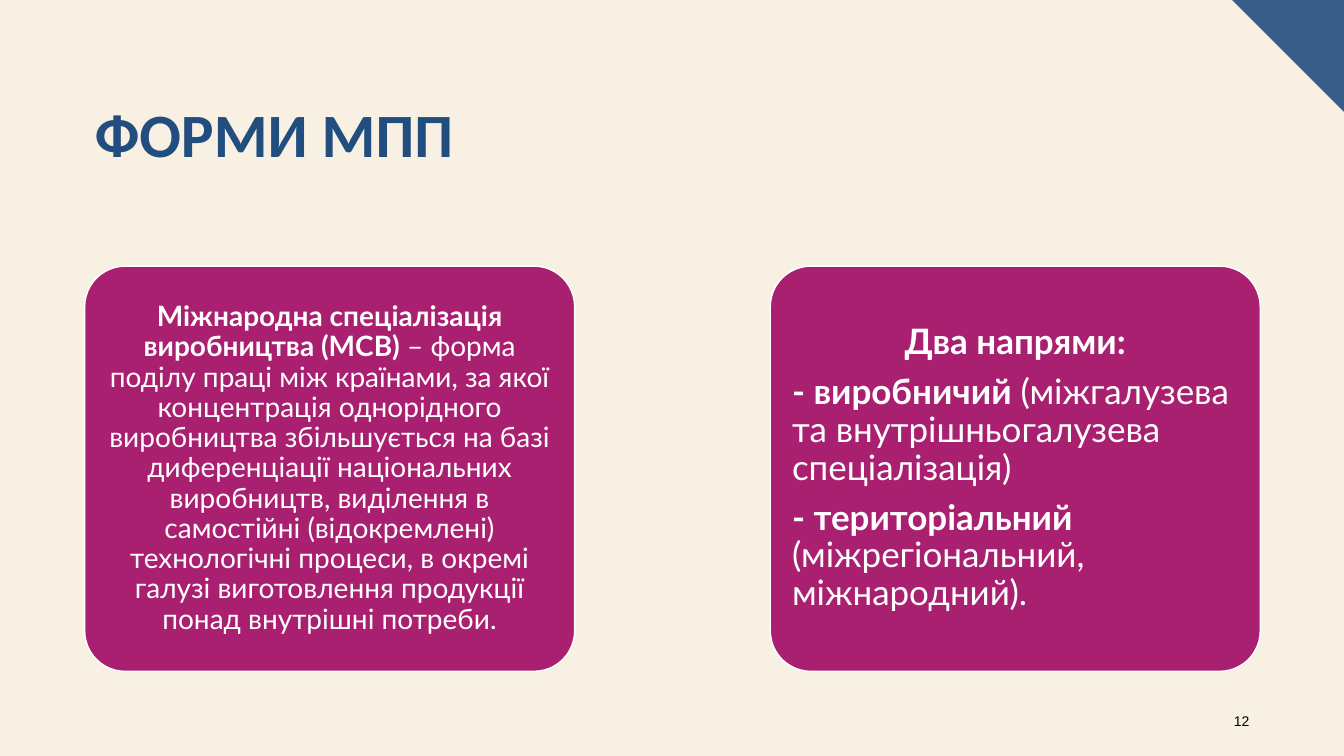
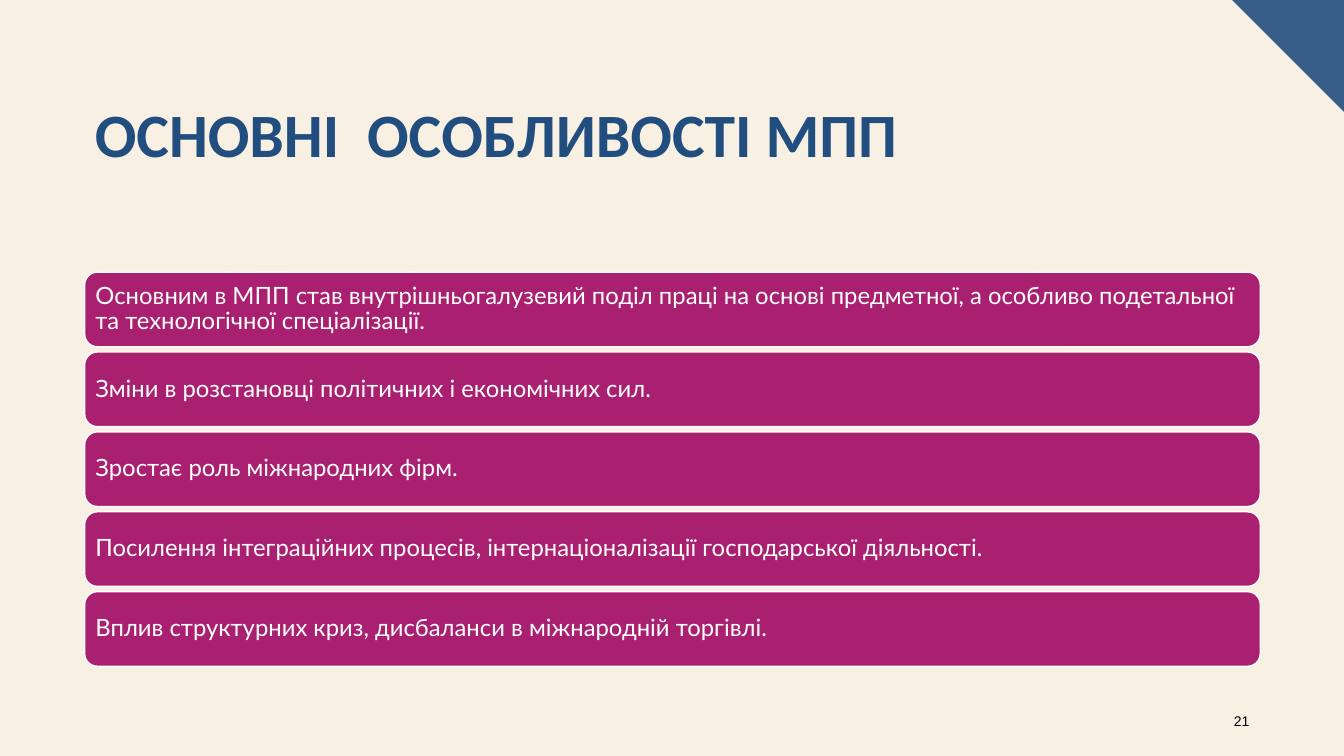
"""Build two slides on forms and features of the division of labour."""
from pptx import Presentation
from pptx import util as u
from pptx.dml.color import RGBColor
from pptx.enum import shapes, text

HUES = {"paper": "F8F0E3", "corner": "385E88", "title": "224E7F",
        "card": "AA2070", "white": "FFFFFF", "black": "000000"}
WIDE, HIGH = 13.33, 7.5
LEFT, SPAN = 0.84, 11.66
FORMS = [
    (20, 0.08, [
        ("c", "Міжнародна спеціалізація виробництва (МСВ) ",
         "– форма поділу праці між країнами, за якої концентрація однорідного "
         "виробництва збільшується на базі диференціації національних виробництв, "
         "виділення в самостійні (відокремлені) технологічні процеси, в окремі "
         "галузі виготовлення продукції понад внутрішні потреби.")]),
    (25, 0.1, [
        ("c", "Два напрями:", ""),
        ("l", "- виробничий", " (міжгалузева та внутрішньогалузева спеціалізація)"),
        ("l", "- територіальний ", "(міжрегіональний, міжнародний).")]),
]
TRAITS = [
    "Основним в МПП став внутрішньогалузевий поділ праці на основі предметної, "
    "а особливо подетальної та технологічної спеціалізації.",
    "Зміни в розстановці політичних і економічних сил.",
    "Зростає роль міжнародних фірм.",
    "Посилення інтеграційних процесів, інтернаціоналізації господарської діяльності.",
    "Вплив структурних криз, дисбаланси в міжнародній торгівлі.",
]
SIDES = {"c": text.PP_ALIGN.CENTER, "l": text.PP_ALIGN.LEFT, "r": text.PP_ALIGN.RIGHT}


def hue(name):
    """Return the named colour."""
    return RGBColor.from_string(HUES[name])


def inch(box):
    """Turn a box of numbers into lengths."""
    return [u.Inches(n) for n in box]


def style(font, face, size, tint, bold=False):
    """Set face, size, colour and weight of a font."""
    font.name, font.size, font.bold = face, u.Pt(size), bold
    font.color.rgb = hue(tint)


def corner(slide, size):
    """Draw the triangle in the top right corner."""
    pen = slide.shapes.build_freeform(u.Inches(WIDE - size), 0)
    pen.add_line_segments([(u.Inches(WIDE), 0), (u.Inches(WIDE), u.Inches(size))])
    flag = pen.convert_to_shape()
    flag.shadow.inherit = False
    flag.fill.solid()
    flag.fill.fore_color.rgb = hue("corner")
    flag.line.fill.background()


def head(slide, box, words):
    """Place and format the title."""
    title = slide.shapes.title
    title.left, title.top, title.width, title.height = inch(box)
    frame = title.text_frame
    frame.text = words
    frame.auto_size = text.MSO_AUTO_SIZE.NONE
    frame.vertical_anchor = text.MSO_ANCHOR.TOP
    para = frame.paragraphs[0]
    para.alignment, para.line_spacing = SIDES["l"], 0.9
    style(para.runs[0].font, "Calibri", 44, "title", True)


def foot(slide, box, num):
    """Write the page number."""
    frame = slide.shapes.add_textbox(*inch(box)).text_frame
    frame.word_wrap = True
    frame.vertical_anchor = text.MSO_ANCHOR.MIDDLE
    frame.text = str(num)
    para = frame.paragraphs[0]
    para.alignment, para.space_after = SIDES["r"], u.Pt(6)
    style(para.runs[0].font, "Arial", 10, "black")


def card(slide, box, curve, size, pad, paras):
    """Draw a rounded card with (side, bold part, plain part) paragraphs."""
    shape = slide.shapes.add_shape(shapes.MSO_SHAPE.ROUNDED_RECTANGLE, *inch(box))
    shape.adjustments[0] = curve
    shape.shadow.inherit = False
    shape.fill.solid()
    shape.fill.fore_color.rgb = hue("card")
    shape.line.color.rgb = hue("white")
    shape.line.width = u.Pt(1)
    frame = shape.text_frame
    frame.word_wrap = True
    frame.vertical_anchor = text.MSO_ANCHOR.MIDDLE
    frame.margin_left = frame.margin_right = u.Inches(pad)
    frame.margin_top = frame.margin_bottom = u.Inches(pad)
    for i, (side, strong, plain) in enumerate(paras):
        para = frame.add_paragraph() if i else frame.paragraphs[0]
        para.alignment, para.line_spacing = SIDES[side], 0.9
        para.space_after = u.Pt(size * 0.35)
        for words, bold in ((strong, True), (plain, False)):
            if words:
                run = para.add_run()
                run.text = words
                style(run.font, "Lato", size, "white", bold)


def pair(slide, box):
    """Set the two cards at both ends of the box."""
    left, top, wide, high = box
    side = 4.86
    for i, (size, pad, paras) in enumerate(FORMS):
        card(slide, (left + i * (wide - side), top, side, high), 0.1, size, pad, paras)


def stack(slide, box):
    """Stack the bars at equal gaps down the box."""
    left, top, wide, high = box
    bar = 0.74
    step = (high - bar) / (len(TRAITS) - 1)
    for i, words in enumerate(TRAITS):
        card(slide, (left, top + i * step, wide, bar), 0.17, 17, 0.07,
             [("l", "", words)])


def page(deck, words, num):
    """Add a slide with the shared title, corner and number."""
    slide = deck.slides.add_slide(deck.slide_layouts[5])
    corner(slide, 1.11)
    head(slide, (LEFT, 0.98, SPAN, 1.45), words)
    foot(slide, (11.99, 6.95, 0.5, 0.4), num)
    return slide


def main():
    """Build and save the deck."""
    deck = Presentation()
    deck.slide_width, deck.slide_height = inch((WIDE, HIGH))
    back = deck.slide_master.background.fill
    back.solid()
    back.fore_color.rgb = hue("paper")
    pair(page(deck, "ФОРМИ МПП", 12), (LEFT, 2.64, SPAN, 4.02))
    stack(page(deck, "ОСНОВНІ  ОСОБЛИВОСТІ МПП", 21), (LEFT, 2.7, SPAN, 3.91))
    deck.save("out.pptx")


if __name__ == "__main__":
    main()
